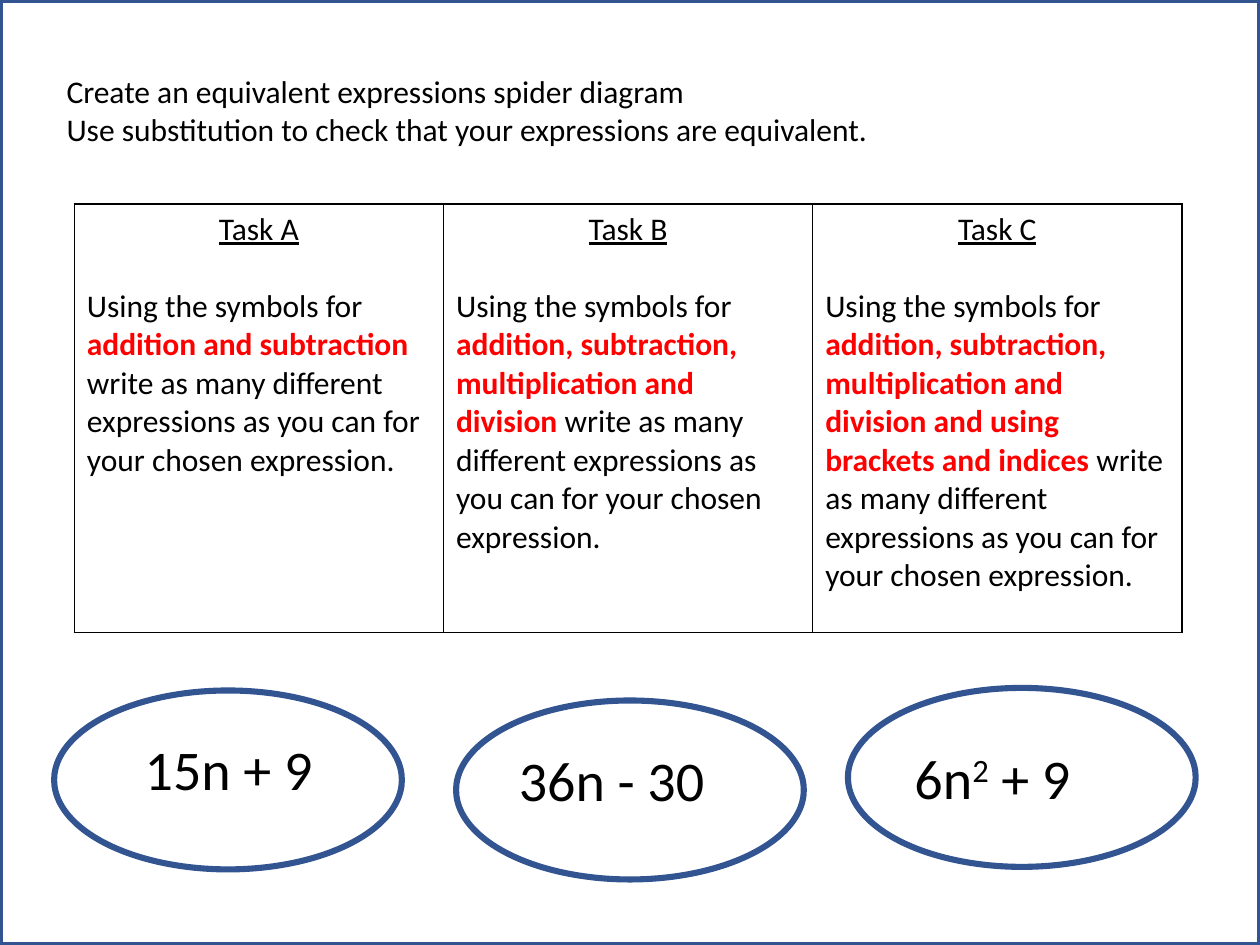
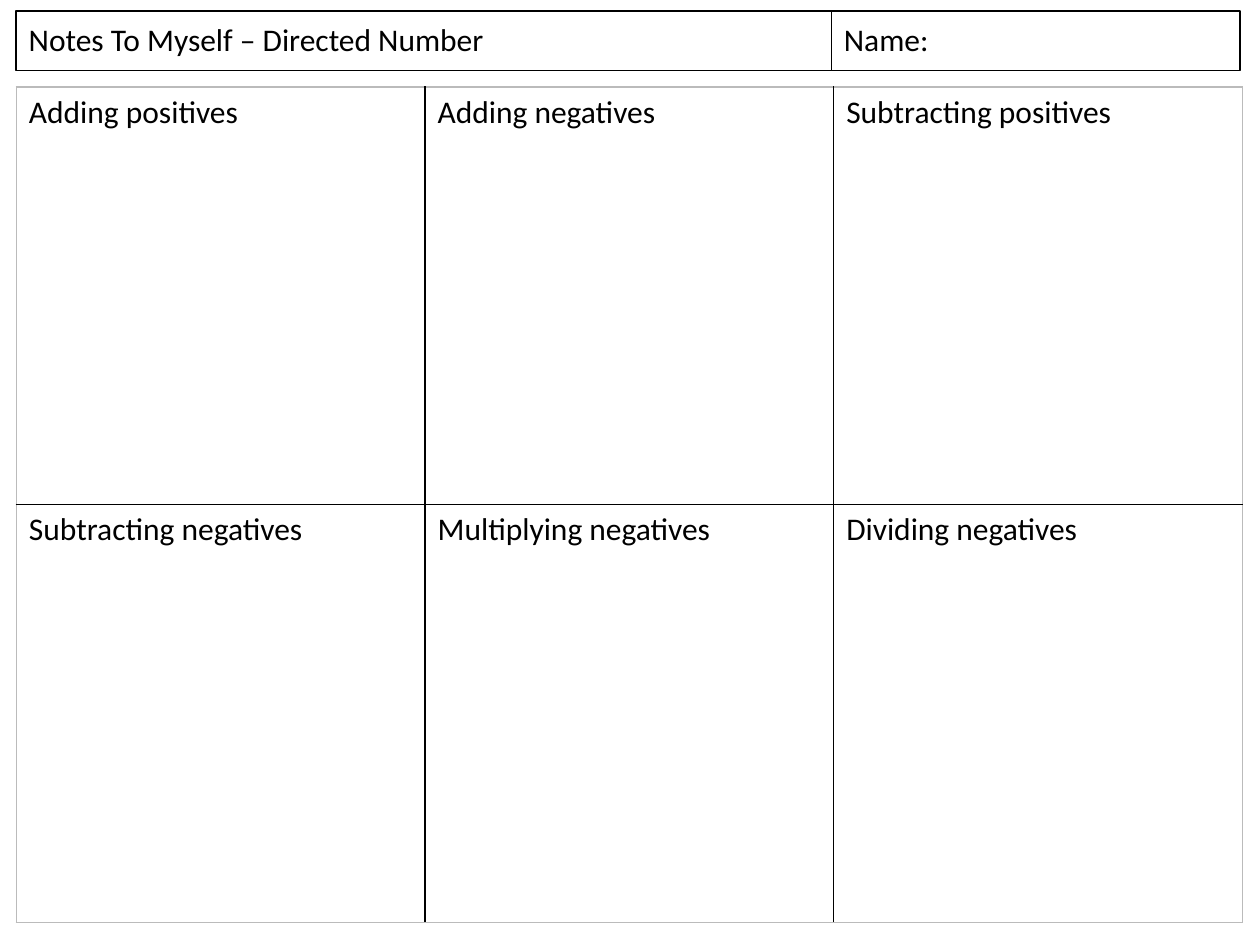
from dataclasses import dataclass

from lxml.etree import SubElement
from pptx import Presentation
from pptx.dml.color import RGBColor as RGB
from pptx.enum.shapes import MSO_SHAPE as Shape
from pptx.enum.text import MSO_ANCHOR as Anchor, PP_ALIGN as Align
from pptx.oxml import parse_xml
from pptx.oxml.ns import nsdecls, qn
from pptx.util import Pt

PX = 9144


@dataclass(frozen=True)
class Theme:
    font: str = "Calibri"
    body: int = 18
    expression: int = 32
    ink: str = "000000"
    paper: str = "FFFFFF"
    accent: str = "FF0000"
    outline: str = "325491"
    faint: str = "BBBBBB"


THEME = Theme()


def px(*lengths):
    return [n * PX for n in lengths]


def style(p, size=THEME.body, align=Align.LEFT):
    p.alignment = align
    p.font.name = THEME.font
    p.font.size = Pt(size)
    p.font.color.rgb = RGB.from_string(THEME.ink)


def add_run(p, text, accent=False, superscript=False):
    r = p.add_run()
    r.text = text
    if accent:
        r.font.bold = True
        r.font.color.rgb = RGB.from_string(THEME.accent)
    if superscript:
        r._r.get_or_add_rPr().set("baseline", "30000")


def add_text(shapes, box, lines, size=THEME.body, anchor=Anchor.TOP):
    tf = shapes.add_textbox(*px(*box)).text_frame
    tf.word_wrap = True
    tf.vertical_anchor = anchor
    for i, runs in enumerate(lines):
        p = tf.paragraphs[0] if i == 0 else tf.add_paragraph()
        style(p, size)
        for text, raised in runs:
            add_run(p, text, superscript=raised)


def add_outline(shapes, kind, box, color, width, fill=None):
    sp = shapes.add_shape(kind, *px(*box))
    sp.shadow.inherit = False
    if fill:
        sp.fill.solid()
        sp.fill.fore_color.rgb = RGB.from_string(fill)
    else:
        sp.fill.background()
    sp.line.color.rgb = RGB.from_string(color)
    sp.line.width = Pt(width)
    return sp


def add_label(s, box, text):
    sp = add_outline(s.shapes, Shape.RECTANGLE, box, THEME.ink, 1, THEME.paper)
    tf = sp.text_frame
    tf.word_wrap = True
    tf.vertical_anchor = Anchor.MIDDLE
    p = tf.paragraphs[0]
    add_run(p, text)
    p.line_spacing = 0.9
    style(p)


def set_borders(cell, colors):
    tc_pr = cell._tc.get_or_add_tcPr()
    for i, (side, color) in enumerate(zip("LRTB", colors)):
        ln = parse_xml(f'<a:ln{side} {nsdecls("a")} w="12700"/>')
        fill = SubElement(ln, qn("a:solidFill"))
        SubElement(fill, qn("a:srgbClr")).set("val", color)
        tc_pr.insert(i, ln)


def add_grid(s, box, rows, cols, edge):
    table = s.shapes.add_table(rows, cols, *px(*box)).table
    table.first_row = table.horz_banding = False
    for r in range(rows):
        for c in range(cols):
            cell = table.cell(r, c)
            cell.fill.background()
            on_edge = (c == 0, c == cols - 1, r == 0, r == rows - 1)
            set_borders(cell, [edge if outer else THEME.ink for outer in on_edge])
    return table


def fill_task(cell, name, operations):
    tf = cell.text_frame
    heading = tf.paragraphs[0]
    add_run(heading, name)
    style(heading, align=Align.CENTER)
    heading.font.underline = True
    heading.space_after = Pt(22)
    p = tf.add_paragraph()
    style(p)
    add_run(p, "Using the symbols for ")
    add_run(p, operations + " ", accent=True)
    add_run(p, "write as many different expressions as you can for your chosen expression.")


def add_bubble(s, left, top, text_box, runs):
    shapes = s.shapes.add_group_shape().shapes
    add_outline(shapes, Shape.OVAL, (left, top, 276, 142), THEME.outline, 3.5)
    add_text(shapes, text_box, [runs], THEME.expression)


def spider_slide(s):
    instructions = [
        "Create an equivalent expressions spider diagram",
        "Use substitution to check that your expressions are equivalent.",
    ]
    add_text(s.shapes, (43, 21, 913, 101), [[(line, False)] for line in instructions],
             anchor=Anchor.BOTTOM)

    four = "addition, subtraction, multiplication and division"
    tasks = [
        ("Task A", "addition and subtraction"),
        ("Task B", four),
        ("Task C", four + " and using brackets and indices"),
    ]
    table = add_grid(s, (59, 162, 879, 340), 1, len(tasks), THEME.ink)
    for c, task in enumerate(tasks):
        fill_task(table.cell(0, c), *task)

    add_bubble(s, 43, 548, (105, 578, 165, 64), [("15n + 9", False)])
    add_bubble(s, 362, 556, (402, 587, 214, 64), [("36n - 30", False)])
    add_bubble(s, 673, 546, (716, 585, 190, 64),
               [("6n", False), ("2", True), (" + 9", False)])
    add_outline(s.shapes, Shape.RECTANGLE, (0, 0, 1000, 750), THEME.outline, 3)


def notes_slide(s):
    add_label(s, (13, 9, 647, 47), "Notes To Myself – Directed Number")
    topics = [
        ["Adding positives", "Adding negatives", "Subtracting positives"],
        ["Subtracting negatives", "Multiplying negatives", "Dividing negatives"],
    ]
    table = add_grid(s, (13, 69, 973, 663), 2, 3, THEME.faint)
    for r, row in enumerate(topics):
        for c, topic in enumerate(row):
            p = table.cell(r, c).text_frame.paragraphs[0]
            add_run(p, topic)
            style(p)
    add_label(s, (660, 9, 324, 47), "Name:")


def main():
    prs = Presentation()
    prs.slide_width, prs.slide_height = px(1000, 750)
    for build in (spider_slide, notes_slide):
        build(prs.slides.add_slide(prs.slide_layouts[6]))
    prs.save("out.pptx")


if __name__ == "__main__":
    main()
